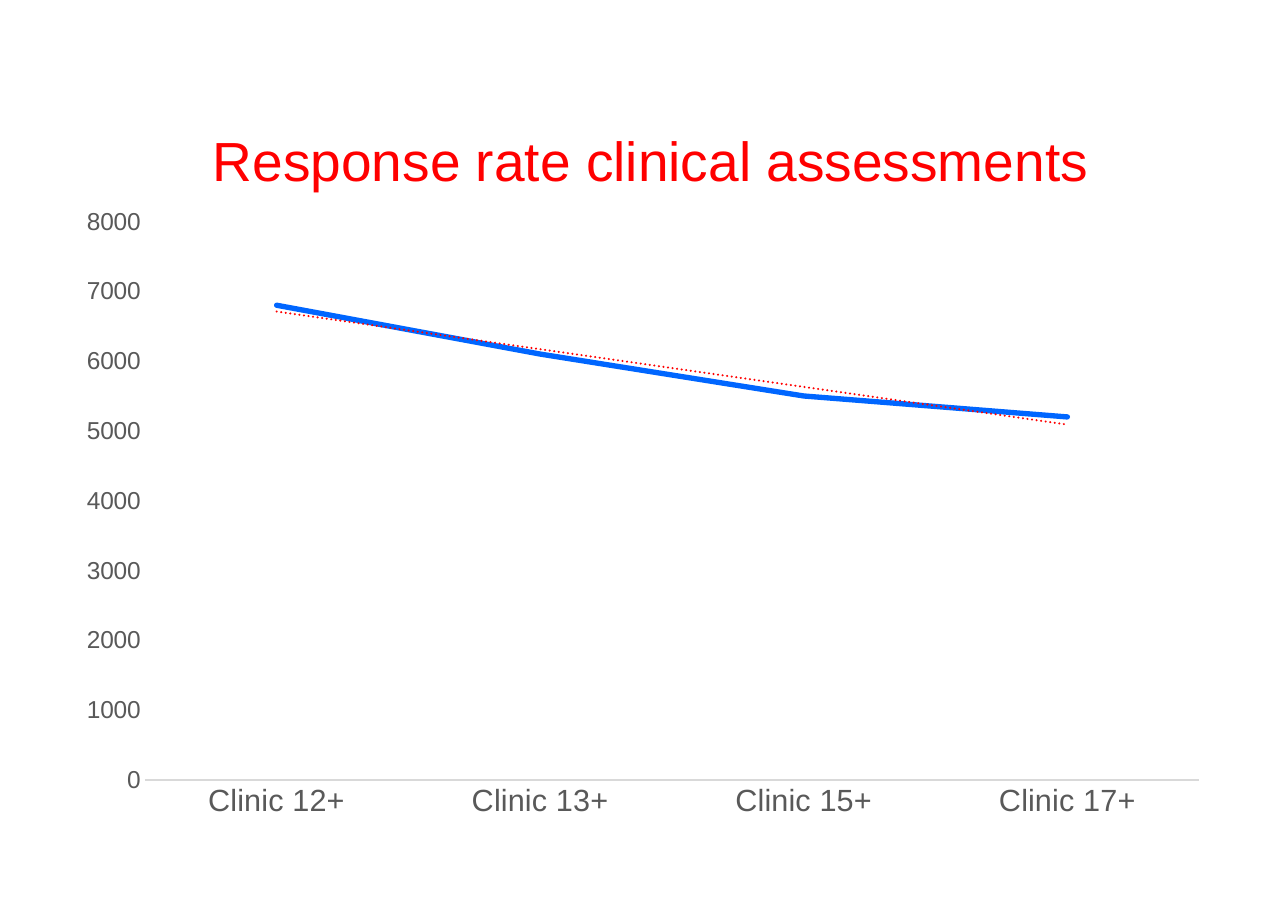
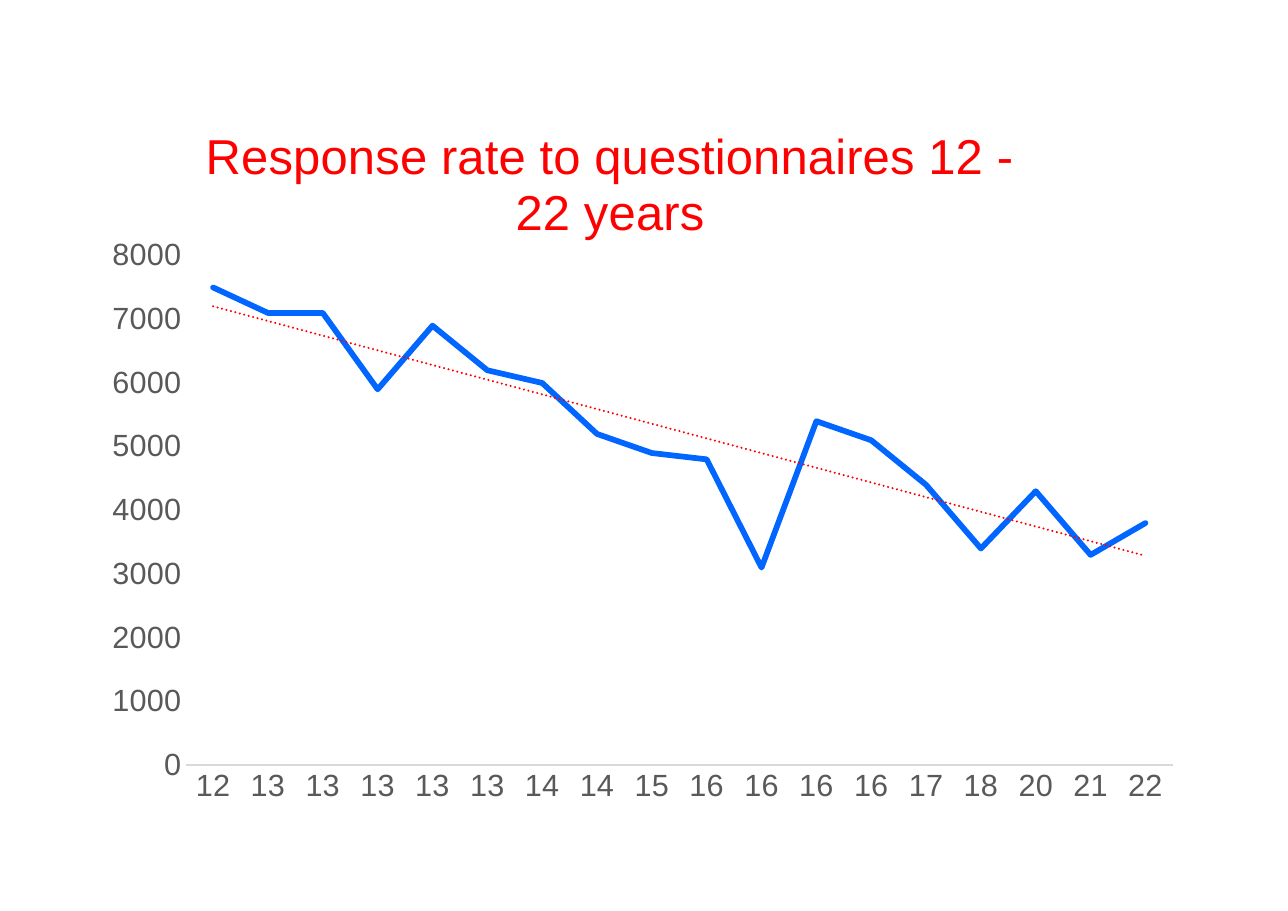
"""Build two slides of line charts showing response rates with their linear trends."""
from lxml import etree
from pptx import Presentation
from pptx.chart.data import CategoryChartData
from pptx.dml.color import RGBColor
from pptx.enum.chart import XL_CHART_TYPE, XL_TICK_MARK
from pptx.oxml import parse_xml
from pptx.oxml.ns import nsdecls, qn
from pptx.util import Cm, Pt

LINE_CHART = XL_CHART_TYPE.LINE
NO_TICK = XL_TICK_MARK.NONE
BLANK_LAYOUT = 6
FONT = "Arial"
COLORS = {
    "paper": "FFFFFF",
    "text": "000000",
    "title": "FF0000",
    "label": "595959",
    "axis": "D9D9D9",
    "response": "0066FF",
    "trend": "FF0000",
}


def rgb(name):
    return RGBColor.from_string(COLORS[name])


def format_text(font, size, color, bold=False):
    font.name = FONT
    font.size = Pt(size)
    font.bold = bold
    font.color.rgb = rgb(color)


def set_layout(parent, index, **fractions):
    old = parent.find(qn("c:layout"))
    if old is not None:
        parent.remove(old)
    layout = parse_xml(f"<c:layout {nsdecls('c')}/>")
    manual = etree.SubElement(layout, qn("c:manualLayout"))
    if "w" in fractions:
        etree.SubElement(manual, qn("c:layoutTarget")).set("val", "inner")
    for key in ("x", "y"):
        etree.SubElement(manual, qn(f"c:{key}Mode")).set("val", "edge")
    for key, value in fractions.items():
        etree.SubElement(manual, qn(f"c:{key}")).set("val", str(value))
    parent.insert(index, layout)


class Deck:
    def __init__(self):
        self.show = Presentation()
        self.show.slide_width = Cm(29.7)
        self.show.slide_height = Cm(21)
        self.slide = None

    def add_slide(self):
        self.slide = self.show.slides.add_slide(self.show.slide_layouts[BLANK_LAYOUT])
        fill = self.slide.background.fill
        fill.solid()
        fill.fore_color.rgb = rgb("paper")

    def add_response_chart(self, title, ages, responses, box, plot_area, title_at,
                           title_size, value_size, line_width):
        data = CategoryChartData(number_format="General")
        data.categories = ages
        data.add_series("Series 1", responses)
        frame = self.slide.shapes.add_chart(LINE_CHART, *map(Cm, box), data)
        chart = frame.chart
        chart.has_legend = False
        format_text(chart.font, 10, "text")
        self.style_title(chart, title, title_size, title_at)
        self.style_axes(chart, value_size)
        plot = chart.plots[0]
        plot.vary_by_categories = False
        self.style_series(plot.series[0], line_width)
        set_layout(chart.element.find(f".//{qn('c:plotArea')}"), 0, **plot_area)

    def style_title(self, chart, title, size, title_at):
        chart.has_title = True
        heading = chart.chart_title
        run = heading.text_frame.paragraphs[0].add_run()
        run.text = title
        format_text(run.font, size, "title")
        heading.include_in_layout = False
        set_layout(heading.element if hasattr(heading, "element") else heading._element,
                   1, **title_at)

    def style_axes(self, chart, value_size):
        for axis, size in ((chart.category_axis, 20), (chart.value_axis, value_size)):
            axis.has_major_gridlines = False
            axis.major_tick_mark = NO_TICK
            axis.minor_tick_mark = NO_TICK
            format_text(axis.tick_labels.font, size, "label")
        chart.category_axis.format.line.color.rgb = rgb("axis")
        chart.category_axis.format.line.width = Pt(0.75)
        chart.value_axis.format.line.fill.background()
        chart.value_axis.minimum_scale = 0
        chart.value_axis.maximum_scale = 8000
        chart.value_axis.major_unit = 1000

    def style_series(self, series, width):
        series.smooth = False
        line = series.format.line
        line.color.rgb = rgb("response")
        line.width = Pt(width)
        element = series._element
        element.find(f".//{qn('a:ln')}").set("cap", "rnd")
        trend = parse_xml(
            f"<c:trendline {nsdecls('c', 'a')}><c:spPr>"
            f'<a:ln w="{Pt(1.5)}" cap="rnd"><a:solidFill>'
            f'<a:srgbClr val="{COLORS["trend"]}"/></a:solidFill>'
            '<a:prstDash val="sysDot"/></a:ln></c:spPr>'
            '<c:trendlineType val="linear"/>'
            '<c:dispRSqr val="0"/><c:dispEq val="0"/></c:trendline>'
        )
        element.find(qn("c:cat")).addprevious(trend)


def main():
    deck = Deck()

    deck.add_slide()
    deck.add_response_chart(
        "Response rate clinical assessments",
        ["Clinic 12+", "Clinic 13+", "Clinic 15+", "Clinic 17+"],
        [6800, 6100, 5500, 5200],
        box=(1.47, 1.8, 26.72, 17.4),
        plot_area={"x": 0.07, "y": 0.19, "w": 0.91, "h": 0.74},
        title_at={"x": 0.12, "y": 0.05},
        title_size=36, value_size=16, line_width=3.5,
    )

    deck.add_slide()
    deck.add_response_chart(
        "Response rate to questionnaires 12 - 22 years",
        ["12", "13", "13", "13", "13", "13", "14", "14", "15",
         "16", "16", "16", "16", "17", "18", "20", "21", "22"],
        [7500, 7100, 7100, 5900, 6900, 6200, 6000, 5200, 4900,
         4800, 3100, 5400, 5100, 4400, 3400, 4300, 3300, 3800],
        box=(1.98, 1.98, 25.58, 17.02),
        plot_area={"x": 0.09, "y": 0.23, "w": 0.89, "h": 0.69},
        title_at={"x": 0.1, "y": 0.04},
        title_size=32, value_size=20, line_width=3.75,
    )

    deck.show.save("out.pptx")


if __name__ == "__main__":
    main()
